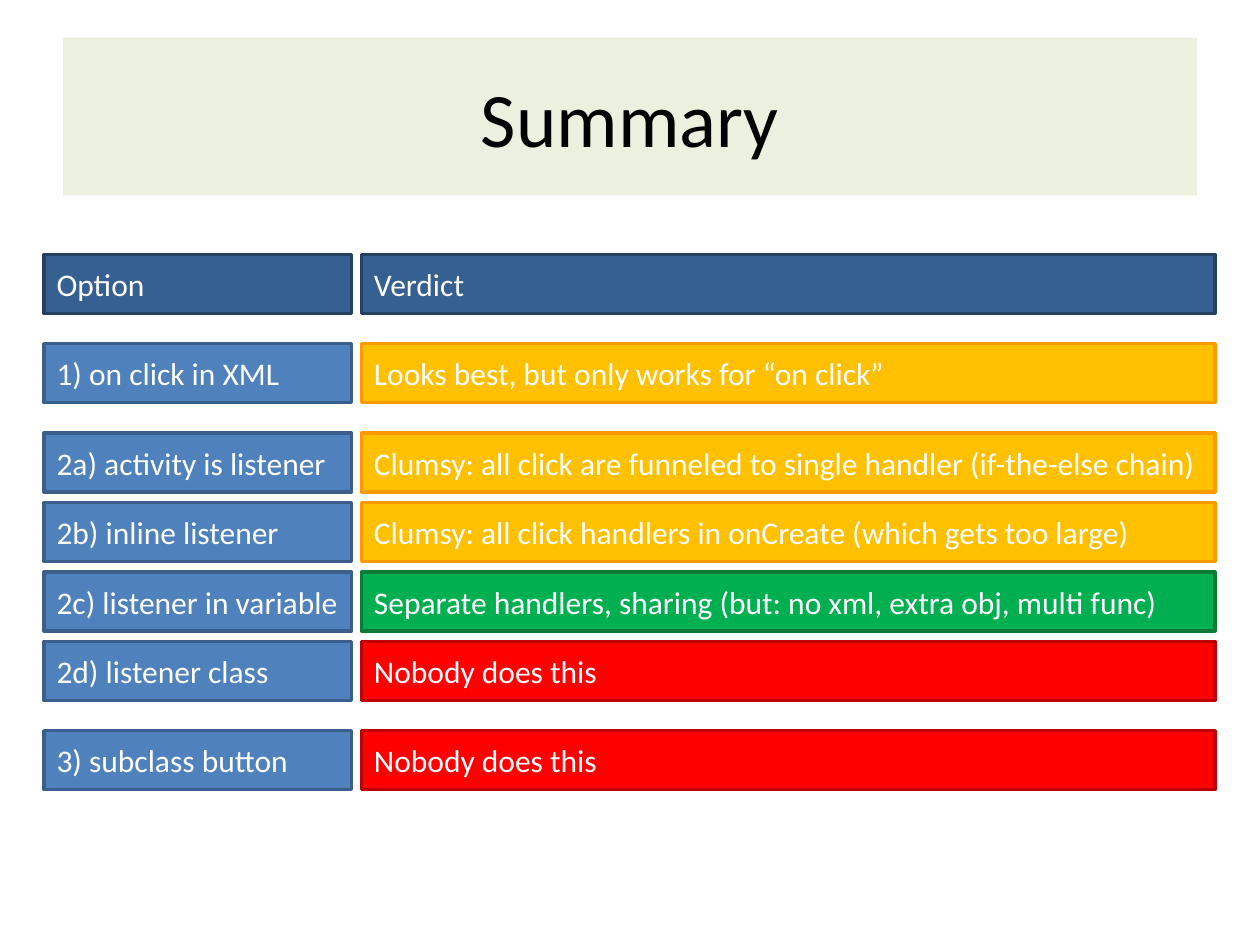
import pptx
import pptx.dml.color
import pptx.enum.shapes
import pptx.enum.text
import pptx.util
from pptx.util import Cm

TITLE = "Summary"
GROUPS = [
    [("Option", "Verdict", "header", "header")],
    [("1) on click in XML", "Looks best, but only works for “on click”", "option", "fair")],
    [
        ("2a) activity is listener",
         "Clumsy: all click are funneled to single handler (if-the-else chain)", "option", "fair"),
        ("2b) inline listener",
         "Clumsy: all click handlers in onCreate (which gets too large)", "option", "fair"),
        ("2c) listener in variable",
         "Separate handlers, sharing (but: no xml, extra obj, multi func)", "option", "good"),
        ("2d) listener class", "Nobody does this", "option", "bad"),
    ],
    [("3) subclass button", "Nobody does this", "option", "bad")],
]

THEME = {
    "font": "Calibri",
    "title_size": 44,
    "body_size": 18,
    "line_width": 2,
    "title_text": "000000",
    "body_text": "FFFFFF",
    "styles": {
        "title": ("EBF1DE", None),
        "header": ("376092", "254061"),
        "option": ("4F81BD", "3A5F8C"),
        "fair": ("FFC000", "FF9900"),
        "good": ("00B050", "0B7B36"),
        "bad": ("FF0000", "C00000"),
    },
}

LEFT, TOP = Cm(0.89), Cm(5.13)
OPTION_W, VERDICT_W, ROW_H = Cm(6.2), Cm(17.2), Cm(1.19)
COLUMN_GAP, ROW_GAP, GROUP_GAP = Cm(0.2), Cm(0.21), Cm(0.4)


def rgb(value):
    return pptx.dml.color.RGBColor.from_string(value)


def add_box(s, text, style, box, size, color, align):
    sp = s.shapes.add_shape(pptx.enum.shapes.MSO_SHAPE.RECTANGLE, *box)
    sp.shadow.inherit = False
    fill, line = THEME["styles"][style]
    sp.fill.solid()
    sp.fill.fore_color.rgb = rgb(fill)
    if line:
        sp.line.color.rgb = rgb(line)
        sp.line.width = pptx.util.Pt(THEME["line_width"])
    else:
        sp.line.fill.background()
    tf = sp.text_frame
    tf.word_wrap = True
    tf.vertical_anchor = pptx.enum.text.MSO_ANCHOR.MIDDLE
    p = tf.paragraphs[0]
    p.text = text
    p.alignment = align
    p.font.name = THEME["font"]
    p.font.size = pptx.util.Pt(size)
    p.font.color.rgb = rgb(color)


def main():
    prs = pptx.Presentation()
    prs.slide_width, prs.slide_height = Cm(25.4), Cm(19.05)
    s = prs.slides.add_slide(prs.slide_layouts[6])
    align = pptx.enum.text.PP_ALIGN

    add_box(s, TITLE, "title", (Cm(1.27), Cm(0.76), Cm(22.86), Cm(3.18)),
            THEME["title_size"], THEME["title_text"], align.CENTER)

    verdict_left = LEFT + OPTION_W + COLUMN_GAP
    top = TOP
    for group in GROUPS:
        for option, verdict, option_style, verdict_style in group:
            for text, style, left, width in (
                (option, option_style, LEFT, OPTION_W),
                (verdict, verdict_style, verdict_left, VERDICT_W),
            ):
                add_box(s, text, style, (left, top, width, ROW_H),
                        THEME["body_size"], THEME["body_text"], align.LEFT)
            top += ROW_H + ROW_GAP
        top += GROUP_GAP

    prs.save("out.pptx")


if __name__ == "__main__":
    main()
